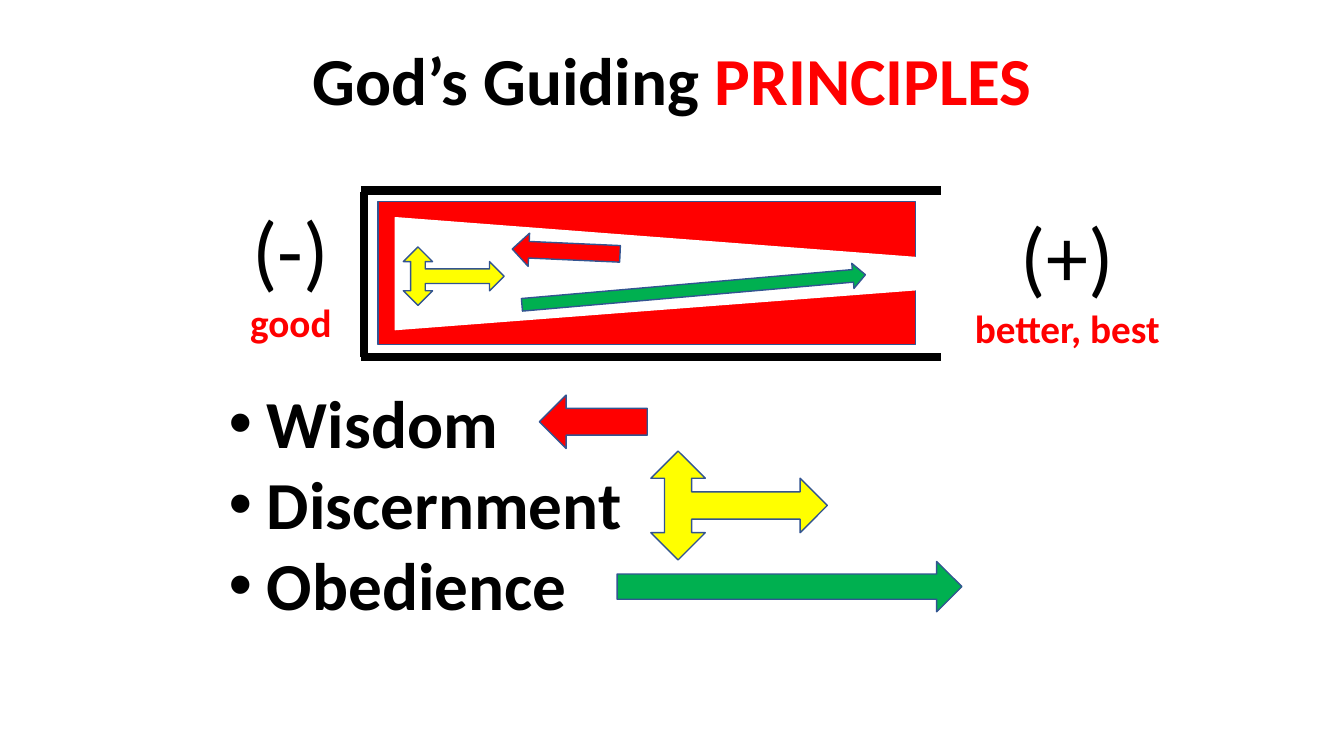
import pptx
import pptx.util
import pptx.dml.color
import pptx.enum.shapes
import pptx.enum.text
import lxml.etree
from pptx.oxml.ns import qn

Inches, Pt = pptx.util.Inches, pptx.util.Pt
SHAPE = pptx.enum.shapes.MSO_SHAPE
CENTER = pptx.enum.text.PP_ALIGN.CENTER
BLACK, WHITE, RED = "000000", "FFFFFF", "FF0000"
YELLOW, GREEN, OUTLINE = "FFFF00", "00B050", "325491"


def color(value):
    return pptx.dml.color.RGBColor.from_string(value)


def set_font(font, size, value, bold=False):
    font.name = "Calibri"
    font.size = Pt(size)
    font.bold = bold
    font.color.rgb = color(value)


def add_text_frame(s, x, y, w, h):
    tf = s.shapes.add_textbox(Inches(x), Inches(y), Inches(w), Inches(h)).text_frame
    tf.word_wrap = True
    return tf


def add_title(s, parts):
    p = add_text_frame(s, 2.17, 0.42, 9, 0.9).paragraphs[0]
    p.alignment = CENTER
    p.line_spacing = 0.9
    for text, value in parts:
        r = p.add_run()
        r.text = text
        set_font(r.font, 48, value, True)


def add_bullets(s, items):
    tf = add_text_frame(s, 2.17, 3.82, 5, 2.6)
    for i, item in enumerate(items):
        p = tf.paragraphs[0] if i == 0 else tf.add_paragraph()
        p.text = item
        p.line_spacing = 0.9
        p.space_before = Pt(6 if i else 0)
        set_font(p.font, 48, BLACK, True)
        # Hanging bullet
        pPr = p._p.get_or_add_pPr()
        pPr.set("marL", str(Inches(0.38)))
        pPr.set("indent", str(-Inches(0.38)))
        bu_font = lxml.etree.Element(qn("a:buFont"), typeface="Arial")
        bu_char = lxml.etree.Element(qn("a:buChar"), char="•")
        at = len(pPr) - len(pPr.findall(qn("a:defRPr")))
        pPr.insert(at, bu_font)
        pPr.insert(at + 1, bu_char)


def add_label(s, x, y, w, sign, caption):
    tf = add_text_frame(s, x, y, w, 1.58)
    tf.text = sign
    tf.add_paragraph().text = caption
    for p, style in zip(tf.paragraphs, ((60, BLACK, False), (28, RED, True))):
        p.alignment = CENTER
        set_font(p.font, *style)


def add_line(s, x1, y1, x2, y2):
    c = s.shapes.add_connector(pptx.enum.shapes.MSO_CONNECTOR.STRAIGHT,
                               Inches(x1), Inches(y1), Inches(x2), Inches(y2))
    c.line.color.rgb = color(BLACK)
    c.line.width = Pt(6)
    lxml.etree.SubElement(c._element.spPr, qn("a:effectLst"))


def add_block(s, kind, x, y, w, h, fill, rotation=0, line=OUTLINE):
    sp = s.shapes.add_shape(kind, Inches(x), Inches(y), Inches(w), Inches(h))
    sp.shadow.inherit = False
    sp.rotation = rotation
    sp.fill.solid()
    sp.fill.fore_color.rgb = color(fill)
    sp.line.color.rgb = color(line)
    sp.line.width = Pt(1)


def main():
    prs = pptx.Presentation()
    prs.slide_width, prs.slide_height = Inches(13.33), Inches(7.5)
    s = prs.slides.add_slide(prs.slide_layouts[6])

    add_title(s, (("God’s Guiding ", BLACK), ("PRINCIPLES", RED)))

    # Open frame around the narrowing path
    for y in (1.89, 3.54):
        add_line(s, 3.58, y, 9.33, y)
    add_line(s, 3.61, 1.9, 3.61, 3.54)
    add_block(s, SHAPE.RECTANGLE, 3.75, 2, 5.33, 1.42, RED)
    add_block(s, SHAPE.ISOSCELES_TRIANGLE, 6.99, -0.91, 1.11, 7.25, WHITE, 90, WHITE)

    # Ends of the path
    add_label(s, 2.22, 1.91, 1.33, "(-)", "good")
    add_label(s, 9.42, 1.97, 2.33, "(+)", "better, best")

    # Principles, each with its arrow in the list and on the path
    add_bullets(s, ("Wisdom", "Discernment", "Obedience"))
    arrows = (
        (SHAPE.LEFT_ARROW, RED,
         (5.35, 3.92, 1.07, 0.53, 0), (5.08, 2.33, 1.07, 0.33, 2.6)),
        (SHAPE.LEFT_RIGHT_UP_ARROW, YELLOW,
         (6.79, 4.14, 1.08, 1.75, 90), (4.21, 2.24, 0.58, 1, 90)),
        (SHAPE.RIGHT_ARROW, GREEN,
         (6.12, 5.57, 3.42, 0.5, 0), (5.17, 2.75, 3.42, 0.25, 355)),
    )
    for kind, fill, *places in arrows:
        for x, y, w, h, rotation in places:
            add_block(s, kind, x, y, w, h, fill, rotation)

    prs.save("out.pptx")


if __name__ == "__main__":
    main()
